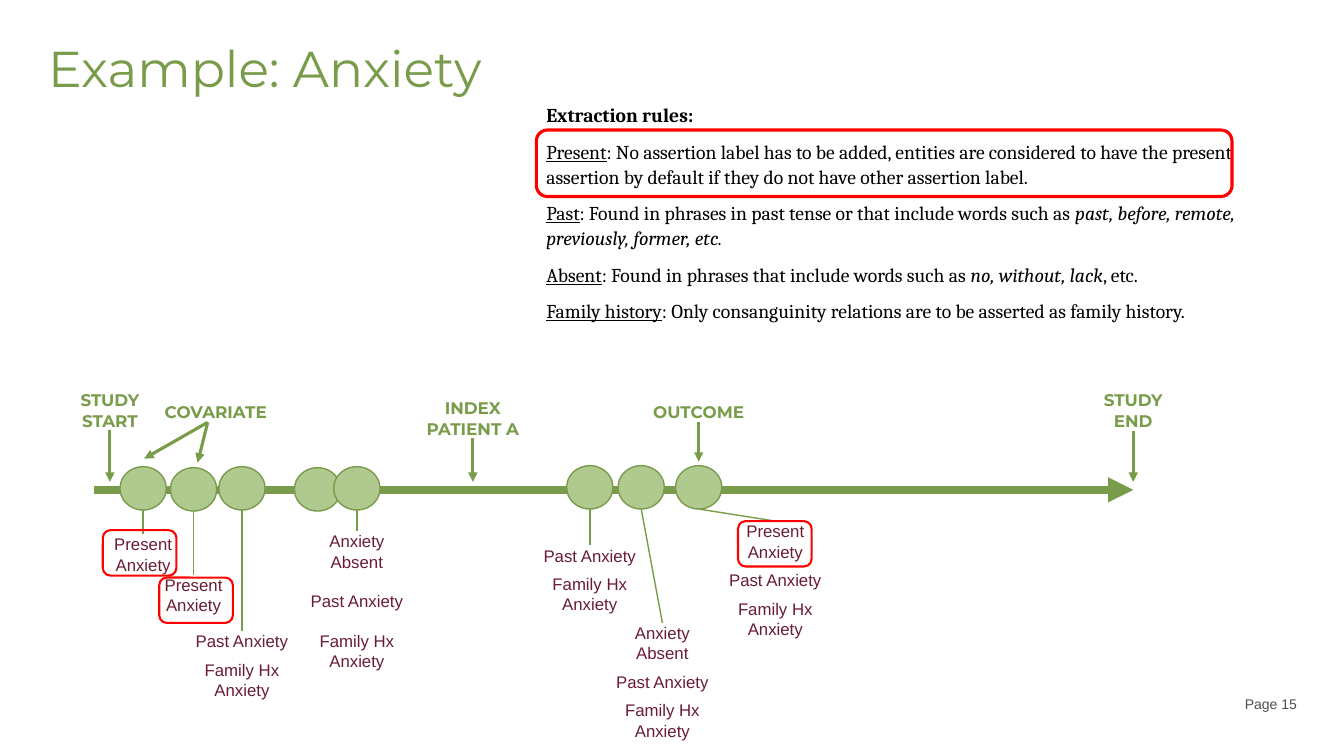
from lxml.etree import SubElement
from pptx import Presentation
from pptx.dml.color import RGBColor
from pptx.enum.shapes import MSO_CONNECTOR as Connector, MSO_SHAPE as Shape
from pptx.enum.text import MSO_ANCHOR as Anchor, PP_ALIGN as Align
from pptx.oxml.ns import qn
from pptx.util import Inches, Pt

GREEN = RGBColor(0x79, 0x9C, 0x4B)
LIGHT_GREEN = RGBColor(0xAF, 0xC9, 0x8E)
WINE = RGBColor(0x69, 0x1D, 0x32)
RED = RGBColor(0xFF, 0x00, 0x00)
BLACK = RGBColor(0x00, 0x00, 0x00)
GREY = RGBColor(0x4B, 0x4F, 0x55)

TITLE_FONT = dict(name="Montserrat", size=Pt(36))
RULE_FONT = dict(name="Cambria", size=Pt(14))
MILESTONE_FONT = dict(name="Montserrat", size=Pt(12), bold=True)
FINDING_FONT = dict(name="Arial", size=Pt(12))
PAGE_FONT = dict(name="Arial", size=Pt(10))

BOLD, UNDER, ITALIC, PLAIN = dict(bold=True), dict(underline=True), dict(italic=True), {}
RULES = [
    [("Extraction rules:", BOLD)],
    [("Present", UNDER),
     (": No assertion label has to be added, entities are considered to have the present "
      "assertion by default if they do not have other assertion label.", PLAIN)],
    [("Past", UNDER),
     (": Found in phrases in past tense or that include words such as ", PLAIN),
     ("past, before, remote, previously, former, etc.", ITALIC)],
    [("Absent", UNDER), (": Found in phrases that include words such as ", PLAIN),
     ("no, without, lack", ITALIC), (", etc.", PLAIN)],
    [("Family history", UNDER),
     (": Only consanguinity relations are to be asserted as family history.", PLAIN)],
]

PRESENT, ABSENT = "Present Anxiety", "Anxiety Absent"
PAST, FAMILY = "Past Anxiety", "Family Hx Anxiety"

# centre, top, width, lines, arrows as (start x, start y, end x, end y)
MILESTONES = [
    (["STUDY START"], 1.09, 3.87, 0.97, 2, [(1.09, 4.27, 1.09, 4.78)]),
    (["COVARIATE"], 2.14, 3.99, 1.15, 1,
     [(2.06, 4.19, 1.96, 4.59), (2.06, 4.19, 1.43, 4.55)]),
    (["INDEX", "PATIENT A"], 4.69, 3.95, 1.24, 2, [(4.69, 4.35, 4.69, 4.78)]),
    (["OUTCOME"], 6.93, 3.99, 0.97, 1, [(6.93, 4.19, 6.93, 4.58)]),
    (["STUDY END"], 11.24, 3.87, 0.97, 2, [(11.24, 4.28, 11.24, 4.78)]),
]

# event centre x, event top, label centre x, label top, label width, gap, findings
EVENTS = [
    (1.42, 4.63, 1.42, 5.30, 0.66, 6, [PRESENT]),
    (1.92, 4.64, 1.92, 5.70, 0.66, 6, [PRESENT]),
    (2.40, 4.63, 2.40, 6.26, 0.94, 6, [PAST, FAMILY]),
    (3.15, 4.64, None, None, None, 0, []),
    (3.54, 4.63, 3.54, 5.27, 0.94, 14, [ABSENT, PAST, FAMILY]),
    (5.85, 4.62, 5.85, 5.41, 0.94, 6, [PAST, FAMILY]),
    (6.36, 4.62, 6.57, 6.18, 0.94, 6, [ABSENT, PAST, FAMILY]),
    (6.93, 4.62, 7.69, 5.17, 0.94, 6, [PRESENT, PAST, FAMILY]),
]
EVENT_W, EVENT_H = 0.46, 0.43
LINE_H = 0.2

HIGHLIGHTS = [
    (5.32, 1.29, 6.9, 0.66, 2.25),
    (1.02, 5.26, 0.73, 0.45, 1.5),
    (1.58, 5.73, 0.73, 0.45, 1.5),
    (7.32, 5.17, 0.73, 0.45, 1.5),
]

deck = Presentation()
deck.slide_width, deck.slide_height = Inches(13.33), Inches(7.5)
page = deck.slides.add_slide(deck.slide_layouts[6])


def add_text(paragraphs, left, top, width, height, font, color,
             align=Align.LEFT, anchor=Anchor.TOP, inset=True, after=0, spacing=1.0):
    box = page.shapes.add_textbox(*map(Inches, (left, top, width, height)))
    frame = box.text_frame
    frame.word_wrap, frame.vertical_anchor = True, anchor
    if not inset:
        for side in ("left", "top", "right", "bottom"):
            setattr(frame, f"margin_{side}", 0)
    for index, spans in enumerate(paragraphs):
        para = frame.paragraphs[0] if index == 0 else frame.add_paragraph()
        para.alignment, para.line_spacing = align, spacing
        last = index == len(paragraphs) - 1
        para.space_after = Pt(0 if last else after)
        for text, extra in spans:
            span = para.add_run()
            span.text = text
            span.font.color.rgb = color
            for key, value in {**font, **extra}.items():
                setattr(span.font, key, value)
    return frame


def add_label(lines, center, top, width, height, font, color, after=0):
    frame = add_text([[(line, PLAIN)] for line in lines], center - width / 2, top, width,
                     height, font, color, Align.CENTER, inset=False, after=after)
    return frame


def add_line(x1, y1, x2, y2, weight, arrow=False):
    line = page.shapes.add_connector(Connector.STRAIGHT, *map(Inches, (x1, y1, x2, y2)))
    line.line.color.rgb, line.line.width = GREEN, Pt(weight)
    if arrow:
        SubElement(line.line._get_or_add_ln(), qn("a:tailEnd"), type="triangle")
    SubElement(line._element.spPr, qn("a:effectLst"))


def add_outline(kind, left, top, width, height, color, weight, fill=None):
    shape = page.shapes.add_shape(kind, *map(Inches, (left, top, width, height)))
    shape.shadow.inherit = False
    shape.line.color.rgb, shape.line.width = color, Pt(weight)
    if fill is None:
        shape.fill.background()
    else:
        shape.fill.solid()
        shape.fill.fore_color.rgb = fill


add_text([[("Page 15", PLAIN)]], 8.77, 6.85, 4.19, 0.27, PAGE_FONT, GREY, Align.RIGHT)
add_text([[("Example: Anxiety", PLAIN)]], 0.38, 0.4, 12.57, 0.54, TITLE_FONT, GREEN,
         anchor=Anchor.MIDDLE)
add_text(RULES, 5.32, 0.96, 7.44, 2.3, RULE_FONT, BLACK, after=8, spacing=1.07)

add_line(0.93, 4.86, 11.24, 4.86, 6, arrow=True)

for lines, center, top, width, rows, arrows in MILESTONES:
    add_label(lines, center, top, width, rows * LINE_H, MILESTONE_FONT, GREEN)
    for arrow in arrows:
        add_line(*arrow, 2.25, arrow=True)

for center, top, label_x, label_y, width, gap, findings in EVENTS:
    add_outline(Shape.OVAL, center - EVENT_W / 2, top, EVENT_W, EVENT_H, GREEN, 1, LIGHT_GREEN)
    if findings:
        rows = sum(1 if finding == PAST else 2 for finding in findings)
        height = rows * LINE_H + (len(findings) - 1) * gap / 72
        add_line(center, top + EVENT_H, label_x, label_y, 1)
        add_label(findings, label_x, label_y, width, height, FINDING_FONT, WINE, gap)

for *place, weight in HIGHLIGHTS:
    add_outline(Shape.ROUNDED_RECTANGLE, *place, RED, weight)

deck.save("out.pptx")
